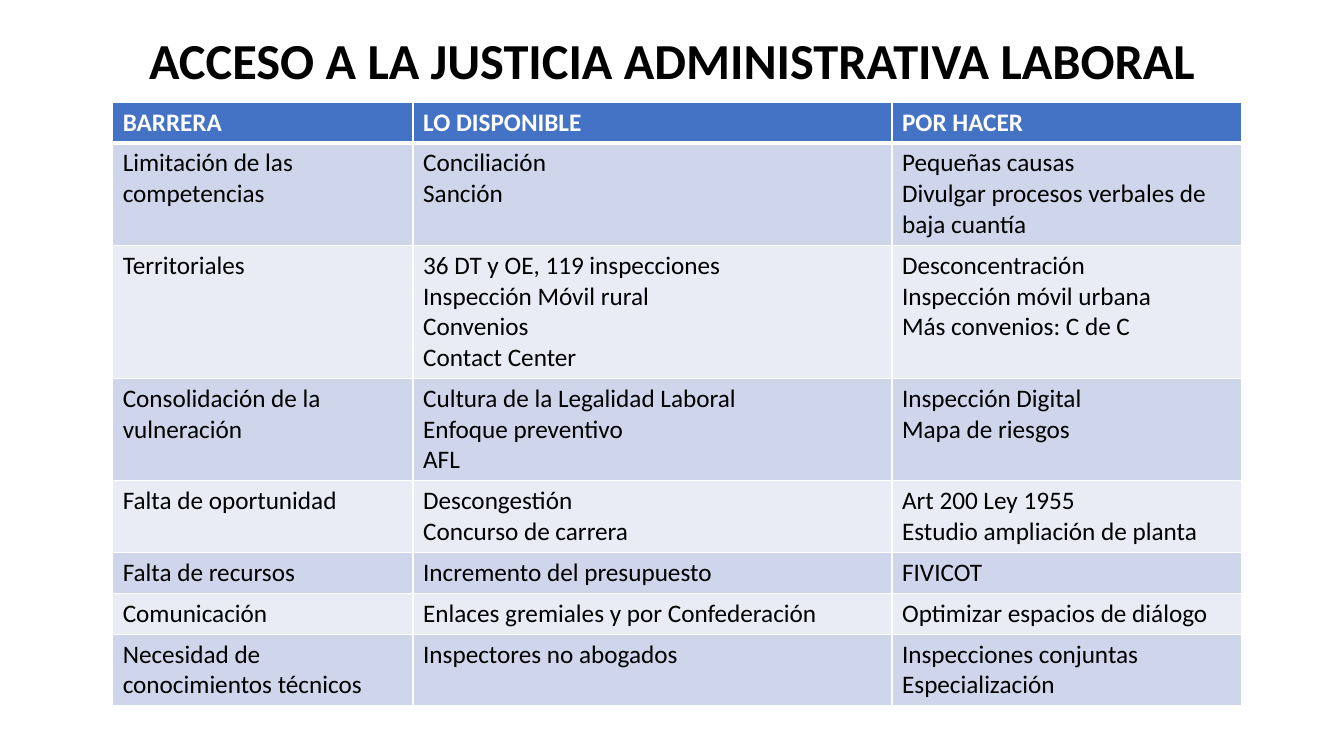
from lxml.etree import SubElement
from pptx import Presentation
from pptx.dml.color import RGBColor
from pptx.enum.text import MSO_ANCHOR, MSO_AUTO_SIZE, PP_ALIGN
from pptx.oxml.ns import qn
from pptx.util import Cm, Pt

BLACK = RGBColor(0x00, 0x00, 0x00)
WHITE = RGBColor(0xFF, 0xFF, 0xFF)
HEADER_BLUE = RGBColor(0x44, 0x72, 0xC4)
BAND_DARK = RGBColor(0xCF, 0xD5, 0xEA)
BAND_LIGHT = RGBColor(0xE9, 0xEB, 0xF5)

TITLE = "ACCESO A LA JUSTICIA ADMINISTRATIVA LABORAL"
TITLE_PLACE = {"left": Cm(2.34), "top": Cm(0.61), "width": Cm(29.21), "height": Cm(1.98)}
TITLE_FRAME = {
    "word_wrap": True,
    "auto_size": MSO_AUTO_SIZE.NONE,
    "vertical_anchor": MSO_ANCHOR.MIDDLE,
}
TITLE_PARAGRAPH = {"alignment": PP_ALIGN.CENTER, "line_spacing": 0.9}
TITLE_FONT = {"name": "Calibri", "size": Pt(36), "bold": True}
HEADER_FONT = {"name": "Calibri", "size": Pt(18), "bold": True}
BODY_FONT = {"name": "Calibri", "size": Pt(18), "bold": False}

COLUMN_WIDTHS = [Cm(7.57), Cm(12.07), Cm(8.81)]
ROW_HEIGHT = Cm(1.03)
BARRIERS = [
    ("BARRERA", "LO DISPONIBLE", "POR HACER"),
    (
        "Limitación de las competencias",
        "Conciliación\nSanción",
        "Pequeñas causas\nDivulgar procesos verbales de baja cuantía",
    ),
    (
        "Territoriales",
        "36 DT y OE, 119 inspecciones\nInspección Móvil rural\nConvenios\nContact Center",
        "Desconcentración\nInspección móvil urbana\nMás convenios: C de C",
    ),
    (
        "Consolidación de la vulneración",
        "Cultura de la Legalidad Laboral\nEnfoque preventivo\nAFL",
        "Inspección Digital\nMapa de riesgos",
    ),
    (
        "Falta de oportunidad",
        "Descongestión\nConcurso de carrera",
        "Art 200 Ley 1955\nEstudio ampliación de planta",
    ),
    ("Falta de recursos", "Incremento del presupuesto", "FIVICOT"),
    (
        "Comunicación",
        "Enlaces gremiales y por Confederación",
        "Optimizar espacios de diálogo",
    ),
    (
        "Necesidad de conocimientos técnicos",
        "Inspectores no abogados",
        "Inspecciones conjuntas\nEspecialización",
    ),
]


def apply_format(target, values):
    """Set every attribute listed in values on target."""
    for attribute, value in values.items():
        setattr(target, attribute, value)


def format_text(text_frame, font_values, color):
    """Give all paragraphs of a text frame one font and colour."""
    for paragraph in text_frame.paragraphs:
        apply_format(paragraph.font, font_values)
        paragraph.font.color.rgb = color


def add_borders(cell, bottom_width):
    """Draw white borders around a cell."""
    properties = cell._tc.get_or_add_tcPr()
    widths = {"a:lnL": Pt(1), "a:lnR": Pt(1), "a:lnT": Pt(1), "a:lnB": bottom_width}
    for side, width in widths.items():
        border = SubElement(properties, qn(side), w=str(width))
        fill = SubElement(border, qn("a:solidFill"))
        SubElement(fill, qn("a:srgbClr"), val=str(WHITE))


def fill_cell(cell, text, row):
    """Write and colour a cell according to its row."""
    is_header = row == 0
    cell.text = text
    format_text(
        cell.text_frame,
        HEADER_FONT if is_header else BODY_FONT,
        WHITE if is_header else BLACK,
    )
    add_borders(cell, Pt(3) if is_header else Pt(1))
    cell.fill.solid()
    band = BAND_DARK if row % 2 else BAND_LIGHT
    cell.fill.fore_color.rgb = HEADER_BLUE if is_header else band


def add_title(slide):
    """Place and format the slide title."""
    title = slide.shapes.title
    apply_format(title, TITLE_PLACE)
    apply_format(title.text_frame, TITLE_FRAME)
    title.text_frame.text = TITLE
    apply_format(title.text_frame.paragraphs[0], TITLE_PARAGRAPH)
    format_text(title.text_frame, TITLE_FONT, BLACK)


def add_barrier_table(slide):
    """Add the table of barriers, available means and pending tasks."""
    barrier_table = slide.shapes.add_table(
        len(BARRIERS), len(COLUMN_WIDTHS), Cm(2.84), Cm(2.57),
        sum(COLUMN_WIDTHS), ROW_HEIGHT * len(BARRIERS),
    ).table
    for column, width in zip(barrier_table.columns, COLUMN_WIDTHS):
        column.width = width
    for row, texts in enumerate(BARRIERS):
        for column, text in enumerate(texts):
            fill_cell(barrier_table.cell(row, column), text, row)


def main():
    """Build and save the slide."""
    presentation = Presentation()
    apply_format(presentation, {"slide_width": Cm(33.87), "slide_height": Cm(19.05)})
    slide = presentation.slides.add_slide(presentation.slide_layouts[5])
    add_title(slide)
    add_barrier_table(slide)
    presentation.save("out.pptx")


if __name__ == "__main__":
    main()
